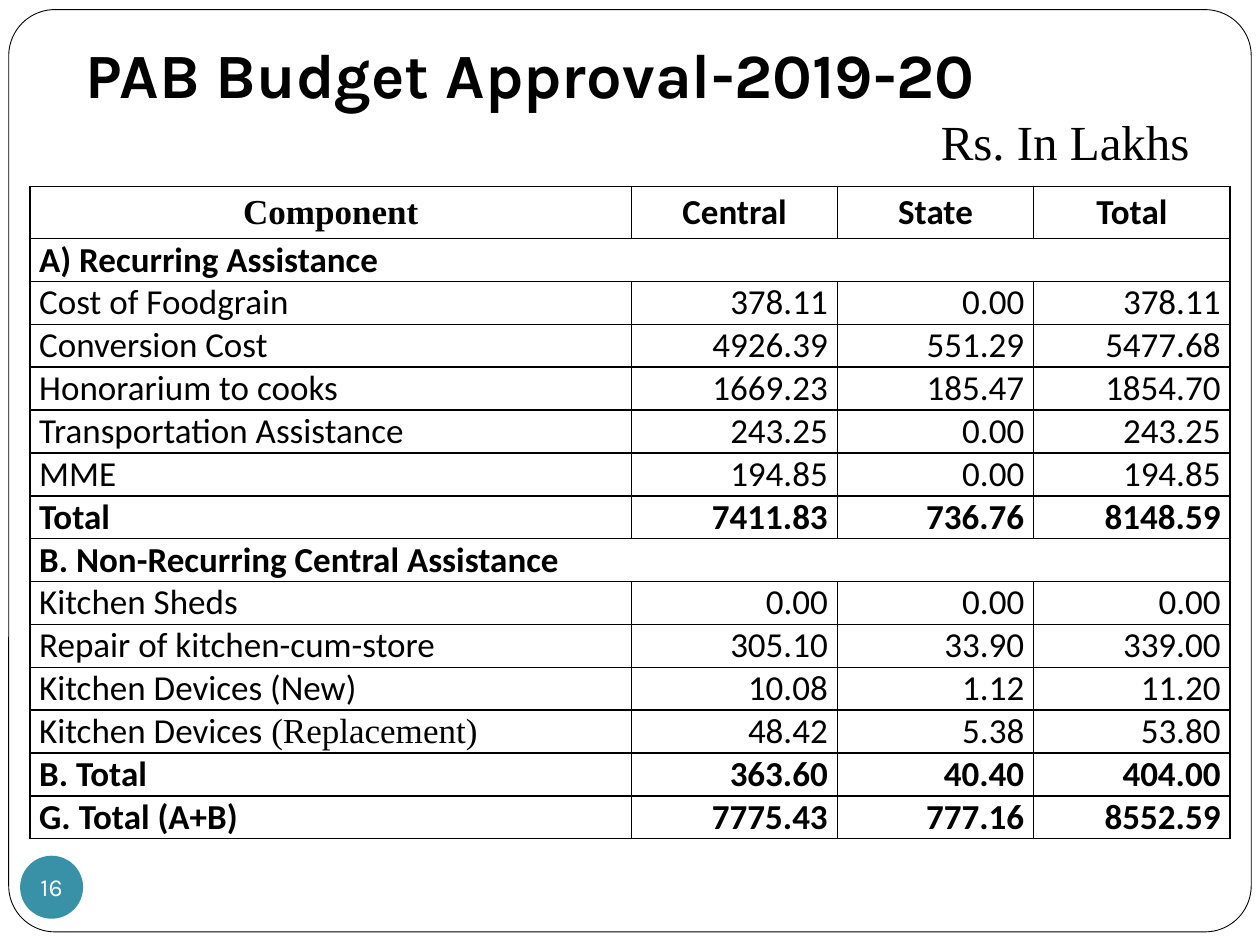
"""Build the PAB budget approval slide with its component table."""
from lxml import etree
from pptx import Presentation
from pptx import util as u
from pptx.dml.color import RGBColor
from pptx.enum import shapes, text
from pptx.oxml.ns import qn

BLACK = RGBColor(0x00, 0x00, 0x00)
WHITE = RGBColor(0xFF, 0xFF, 0xFF)
TEAL = RGBColor(0x38, 0x91, 0xA7)
SERIF = "Times New Roman"
LEFT, CENTER, RIGHT = text.PP_ALIGN.LEFT, text.PP_ALIGN.CENTER, text.PP_ALIGN.RIGHT
TOP, MIDDLE, BOTTOM = text.MSO_ANCHOR.TOP, text.MSO_ANCHOR.MIDDLE, text.MSO_ANCHOR.BOTTOM


def write(frame, words, font, size, color=BLACK, bold=False, align=LEFT):
    para = frame.paragraphs[0]
    para.alignment = align
    span = para.add_run()
    span.text = words
    span.font.color.rgb = color
    for name, value in {"name": font, "size": u.Pt(size), "bold": bold}.items():
        setattr(span.font, name, value)


def draw_borders(cell):
    properties = cell._tc.get_or_add_tcPr()
    for side in ("lnL", "lnR", "lnT", "lnB"):
        line = etree.SubElement(properties, qn(f"a:{side}"), w=str(u.Pt(1)))
        fill = etree.SubElement(line, qn("a:solidFill"))
        etree.SubElement(fill, qn("a:srgbClr"), val=str(BLACK))


deck = Presentation()
deck.slide_width, deck.slide_height = u.Pt(720), u.Pt(540)
page = deck.slides.add_slide(deck.slide_layouts[6])

border = page.shapes.add_shape(
    shapes.MSO_SHAPE.ROUNDED_RECTANGLE, u.Pt(5), u.Pt(5.5), u.Pt(710), u.Pt(527)
)
border.adjustments[0] = 0.05
border.shadow.inherit = False
border.fill.solid()
border.fill.fore_color.rgb = WHITE
border.line.color.rgb = BLACK
border.line.width = u.Pt(0.5)

headings = [
    ((42, 18, 642, 52.5), "PAB Budget Approval-2019-20", "Karla", 36, True, BOTTOM),
    ((530.5, 60, 168, 36), "Rs. In Lakhs", SERIF, 28, False, TOP),
]
for place, words, font, size, bold, anchor in headings:
    box = page.shapes.add_textbox(*map(u.Pt, place))
    layout = {"word_wrap": True, "vertical_anchor": anchor}
    if anchor == BOTTOM:
        layout["margin_bottom"] = u.Pt(7.2)
    for name, value in layout.items():
        setattr(box.text_frame, name, value)
    write(box.text_frame, words, font, size, bold=bold)

badge = page.shapes.add_shape(
    shapes.MSO_SHAPE.OVAL, u.Pt(11.5), u.Pt(489), u.Pt(36), u.Pt(36)
)
badge.shadow.inherit = False
badge.fill.solid()
badge.fill.fore_color.rgb = TEAL
badge.line.fill.background()
badge_layout = {"word_wrap": False, "vertical_anchor": MIDDLE}
badge_layout |= {f"margin_{side}": 0 for side in ("left", "top", "right", "bottom")}
for name, value in badge_layout.items():
    setattr(badge.text_frame, name, value)
write(badge.text_frame, "16", "Karla", 14, WHITE, align=CENTER)

budget = [
    ("Component", "Central", "State", "Total"),
    ("A) Recurring Assistance",),
    ("Cost of Foodgrain", "378.11", "0.00", "378.11"),
    ("Conversion Cost", "4926.39", "551.29", "5477.68"),
    ("Honorarium to cooks", "1669.23", "185.47", "1854.70"),
    ("Transportation Assistance", "243.25", "0.00", "243.25"),
    ("MME", "194.85", "0.00", "194.85"),
    ("Total", "7411.83", "736.76", "8148.59"),
    ("B. Non-Recurring Central Assistance",),
    ("Kitchen Sheds", "0.00", "0.00", "0.00"),
    ("Repair of kitchen-cum-store", "305.10", "33.90", "339.00"),
    ("Kitchen Devices (New)", "10.08", "1.12", "11.20"),
    ("Kitchen Devices", "48.42", "5.38", "53.80"),
    ("B. Total", "363.60", "40.40", "404.00"),
    ("G. Total (A+B)", "7775.43", "777.16", "8552.59"),
]
widths = [344, 117.5, 112.25, 112.25]
heights = [29.7] + [24.5] * (len(budget) - 1)
table = page.shapes.add_table(
    len(budget), len(widths), u.Pt(17), u.Pt(106.7), u.Pt(sum(widths)), u.Pt(sum(heights))
).table
table.first_row = table.horz_banding = False
for column, width in zip(table.columns, widths):
    column.width = u.Pt(width)
for row, height in zip(table.rows, heights):
    row.height = u.Pt(height)

for i, entries in enumerate(budget):
    section = len(entries) == 1
    bold = i == 0 or section or "Total" in entries[0]
    anchor = BOTTOM if section or i > 7 else MIDDLE
    cell_layout = {
        "margin_left": u.Pt(5.4), "margin_right": u.Pt(5.4),
        "margin_top": 0, "margin_bottom": 0, "vertical_anchor": anchor,
    }
    for j in range(len(widths)):
        cell = table.cell(i, j)
        draw_borders(cell)
        cell.fill.background()
        for name, value in cell_layout.items():
            setattr(cell, name, value)
    for j, words in enumerate(entries):
        align = CENTER if i == 0 else RIGHT if j else LEFT
        font = SERIF if words == "Component" else "Calibri"
        write(table.cell(i, j).text_frame, words, font, 20, bold=bold, align=align)
    if section:
        table.cell(i, 0).merge(table.cell(i, len(widths) - 1))
    if entries[0] == "Kitchen Devices":
        write(table.cell(i, 0).text_frame, " (Replacement)", SERIF, 20)

deck.save("out.pptx")
